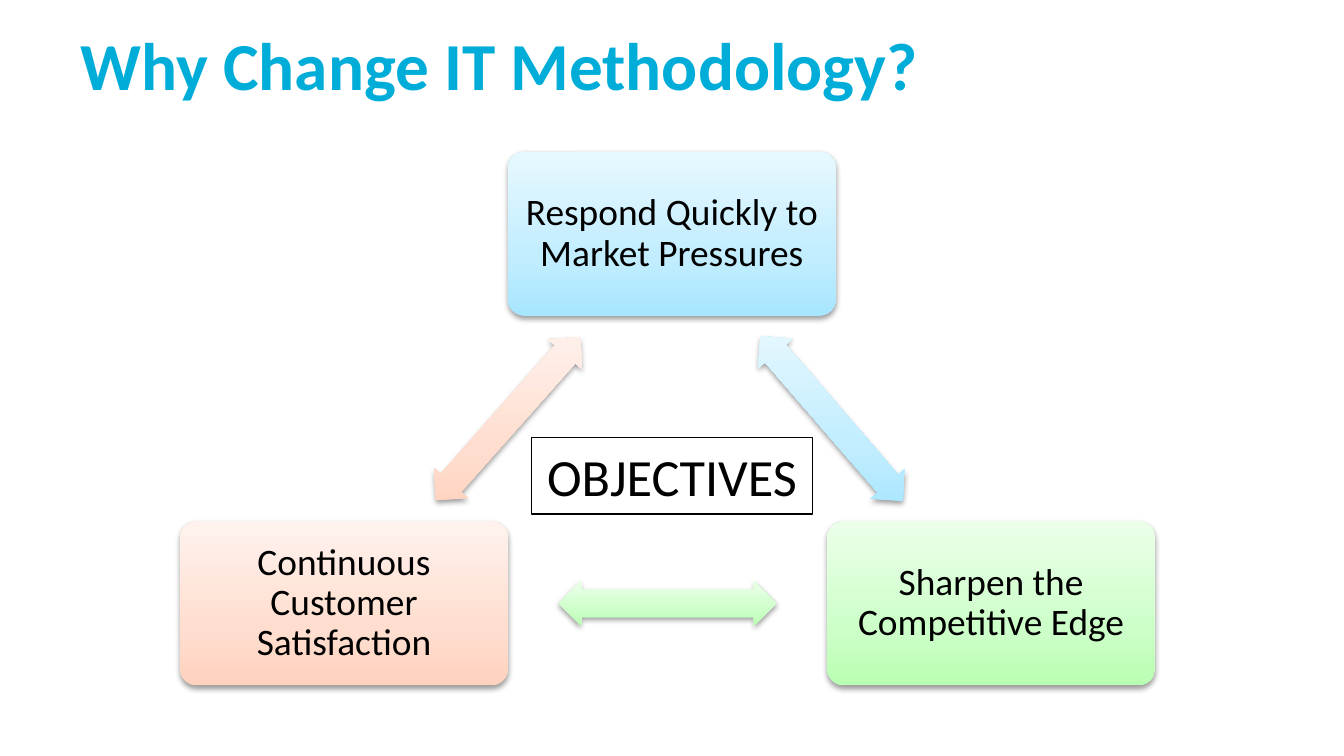
import math
from dataclasses import dataclass

import pptx
import pptx.dml.color
import pptx.enum.shapes
import pptx.enum.text
import pptx.oxml
import pptx.oxml.ns
import pptx.util

SHAPES = pptx.enum.shapes.MSO_SHAPE
ALIGN = pptx.enum.text.PP_ALIGN
ANCHOR = pptx.enum.text.MSO_ANCHOR
SLIDE_WIDTH = pptx.util.Inches(10)
SLIDE_HEIGHT = SLIDE_WIDTH * 9 // 16
CELL = SLIDE_WIDTH / 100
BOX_SIZE = (24.4, 12.2)
ARROW_SIZE = (16.2, 3.4)


@dataclass(frozen=True)
class Theme:
    font: str = "Calibri"
    title_color: str = "00ADD8"
    text_color: str = "000000"
    title_size: int = 36
    label_size: int = 28
    box_size: int = 20
    blue: tuple = ("A7E6FF", "C1EDFF", "E7F8FF")
    green: tuple = ("B9FFB2", "CDFFC9", "ECFFEA")
    orange: tuple = ("FFD2BD", "FFDED0", "FFF2ED")


THEME = Theme()
OBJECTIVES = [
    ("Respond Quickly to Market Pressures", (50, 17.4), THEME.blue),
    ("Sharpen the Competitive Edge", (73.75, 44.9), THEME.green),
    ("Continuous Customer Satisfaction", (25.6, 44.9), THEME.orange),
]


def grid(*cells):
    return [round(cell * CELL) for cell in cells]


def centered(center, size):
    return grid(center[0] - size[0] / 2, center[1] - size[1] / 2, *size)


def set_text(shape, text, size, color, alignment, bold=False):
    text_frame = shape.text_frame
    text_frame.text = text
    paragraph = text_frame.paragraphs[0]
    paragraph.alignment = alignment
    font = paragraph.runs[0].font
    font.name = THEME.font
    font.size = pptx.util.Pt(size)
    font.bold = bold
    font.color.rgb = pptx.dml.color.RGBColor.from_string(color)
    return paragraph


def set_gradient(shape, colors):
    stops = "".join(
        f'<a:gs pos="{position}"><a:srgbClr val="{color}"/></a:gs>'
        for position, color in zip((0, 35000, 100000), colors)
    )
    gradient = pptx.oxml.parse_xml(
        f'<a:gradFill {pptx.oxml.ns.nsdecls("a")} rotWithShape="0">'
        f'<a:gsLst>{stops}</a:gsLst><a:lin ang="16200000" scaled="0"/></a:gradFill>'
    )
    shape.fill.background()
    properties = shape._element.spPr
    properties.replace(properties.find(pptx.oxml.ns.qn("a:noFill")), gradient)


def set_shadow(shape):
    shape.shadow.inherit = False
    shadow = pptx.oxml.parse_xml(
        f'<a:outerShdw {pptx.oxml.ns.nsdecls("a")} blurRad="{pptx.util.Pt(3.1)}" '
        f'dist="{pptx.util.Pt(1.6)}" dir="5400000" rotWithShape="0">'
        '<a:srgbClr val="000000"><a:alpha val="38000"/></a:srgbClr></a:outerShdw>'
    )
    shape._element.spPr.find(pptx.oxml.ns.qn("a:effectLst")).append(shadow)


def add_gradient_shape(slide, kind, center, size, colors, adjustments):
    shape = slide.shapes.add_shape(kind, *centered(center, size))
    for index, value in enumerate(adjustments):
        shape.adjustments[index] = value
    set_gradient(shape, colors)
    shape.line.fill.background()
    set_shadow(shape)
    return shape


def add_objective(slide, text, center, colors):
    box = add_gradient_shape(
        slide, SHAPES.ROUNDED_RECTANGLE, center, BOX_SIZE, colors, [0.1]
    )
    text_frame = box.text_frame
    text_frame.word_wrap = True
    text_frame.vertical_anchor = ANCHOR.MIDDLE
    text_frame.margin_left = text_frame.margin_right = pptx.util.Inches(0.08)
    paragraph = set_text(box, text, THEME.box_size, THEME.text_color, ALIGN.CENTER)
    paragraph.line_spacing = 0.9


def add_arrow(slide, start, end, colors):
    middle = [(first + second) / 2 for first, second in zip(start, end)]
    arrow = add_gradient_shape(
        slide, SHAPES.LEFT_RIGHT_ARROW, middle, ARROW_SIZE, colors, [0.6, 0.5]
    )
    angle = math.atan2(end[1] - start[1], end[0] - start[0])
    arrow.rotation = math.degrees(angle) % 360


def add_title(slide, text):
    title = slide.shapes.title
    title.left, title.top, title.width, title.height = grid(5, -0.1, 90, 9.7)
    title.text_frame.auto_size = pptx.enum.text.MSO_AUTO_SIZE.NONE
    title.text_frame.vertical_anchor = ANCHOR.MIDDLE
    set_text(title, text, THEME.title_size, THEME.title_color, ALIGN.LEFT, True)


def add_label(slide, text):
    label = slide.shapes.add_textbox(*grid(39.55, 32.55, 20.9, 5.7))
    label.line.color.rgb = pptx.dml.color.RGBColor.from_string(THEME.text_color)
    label.line.width = pptx.util.Pt(0.75)
    label.text_frame.word_wrap = False
    set_text(label, text, THEME.label_size, THEME.text_color, ALIGN.CENTER)


def main():
    presentation = pptx.Presentation()
    presentation.slide_width = SLIDE_WIDTH
    presentation.slide_height = SLIDE_HEIGHT
    slide = presentation.slides.add_slide(presentation.slide_layouts[5])
    add_title(slide, "Why Change IT Methodology?")
    following = OBJECTIVES[1:] + OBJECTIVES[:1]
    for (text, center, colors), (_, target, _) in zip(OBJECTIVES, following):
        add_objective(slide, text, center, colors)
        add_arrow(slide, center, target, colors)
    add_label(slide, "OBJECTIVES")
    presentation.save("out.pptx")


if __name__ == "__main__":
    main()
